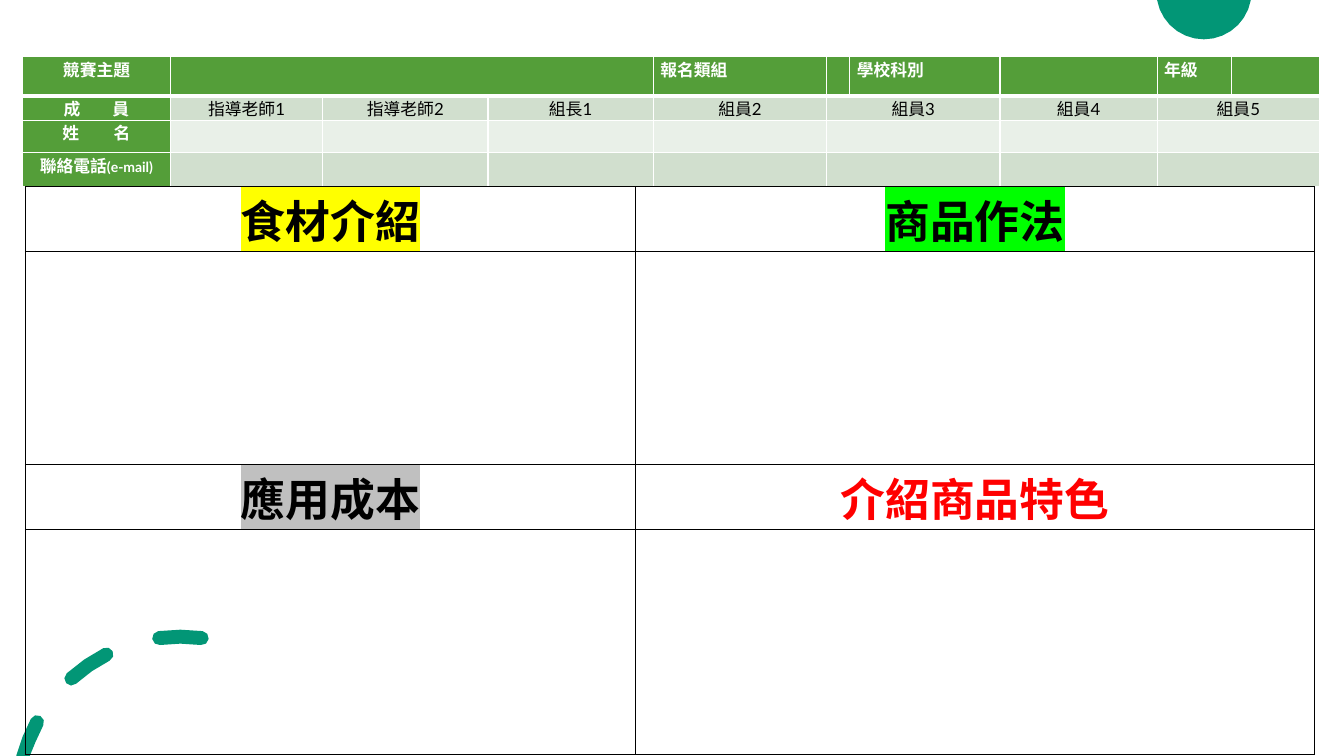
"""Build the contest entry form slide with its two tables."""
from math import cos, radians, sin
from lxml.etree import SubElement
from pptx import Presentation
from pptx.dml.color import RGBColor
from pptx.enum.text import PP_ALIGN
from pptx.oxml import parse_xml
from pptx.oxml.ns import nsdecls, qn
from pptx.util import Pt

TEAL = RGBColor(0x02, 0x96, 0x76)
GREEN = RGBColor(0x54, 0x9E, 0x39)
SAGE = RGBColor(0xD1, 0xDF, 0xCE)
PALE = RGBColor(0xE9, 0xF0, 0xE8)
WHITE = RGBColor(0xFF, 0xFF, 0xFF)
BLACK = RGBColor(0x00, 0x00, 0x00)
RED = RGBColor(0xFF, 0x00, 0x00)
YELLOW = RGBColor(0xFF, 0xFF, 0x00)
LIME = RGBColor(0x00, 0xFF, 0x00)
GREY = RGBColor(0xC0, 0xC0, 0xC0)
WIDE, HIGH, FINE = 960, 540, 100


def write(cell, text, size=12, font="Lato", color=WHITE, bold=True,
          align=PP_ALIGN.CENTER, mark=None, gap=0):
    para = cell.text_frame.paragraphs[0]
    para.alignment = align
    run = para.add_run()
    run.text = text
    run.font.size, run.font.bold = Pt(size), bold
    run.font.color.rgb = color
    props = run.font._element
    if gap:
        props.set("spc", str(gap * 100))
    if mark:
        light = SubElement(props, qn("a:highlight"))
        SubElement(light, qn("a:srgbClr")).set("val", str(mark))
    run.font.name = font


def arc(mid, top, size, start, end, steps):
    turns = [radians(start + (end - start) * i / steps) for i in range(steps + 1)]
    return [(round(FINE * (mid + size * cos(a))),
             round(FINE * min(max(top - size * sin(a), 0), HIGH))) for a in turns]


deck = Presentation()
deck.slide_width, deck.slide_height = Pt(WIDE), Pt(HIGH)
slide = deck.slides.add_slide(deck.slide_layouts[6])

MID, LOW, RING, HALF = 128.9, 571.2, 116.4, 5
dashes = []
for start, end in [(82.5, 97.5), (117, 132), (151.6, 165)]:
    dash = arc(MID, LOW, RING + HALF, start, end, 2)
    for turn, tilt in [(end, end), (start, start + 180)]:
        x, y = MID + RING * cos(radians(turn)), LOW - RING * sin(radians(turn))
        dash += arc(x, y, HALF, tilt, tilt + 180, 4)[1:]
        if turn == end:
            dash += arc(MID, LOW, RING - HALF, end, start, 2)[1:]
    dashes.append(dash[:-1])

for group in [[arc(860, -5.9, 34, 190, 350, 14)], dashes]:
    pen = slide.shapes.build_freeform(*group[0][0], scale=Pt(1) / FINE)
    for i, points in enumerate(group):
        if i:
            pen.move_to(*points[0])
        pen.add_line_segments(points[1:], close=True)
    shape = pen.convert_to_shape()
    shape.shadow.inherit = False
    shape.fill.solid()
    shape.fill.fore_color.rgb = TEAL
    shape.line.fill.background()

grids = []
for left, top, cols, rows, edge in [
    (16, 40.5, [105.8, 108.7, 118.1, 118.1, 123.8, 16.6, 107.3, 112.3, 53.3, 62.6],
     [28, 17.5, 23.2, 24], WHITE),
    (18.2, 133.3, [435.6, 485.3], [46, 152, 46, 161], BLACK),
]:
    grid = slide.shapes.add_table(len(rows), len(cols), Pt(left), Pt(top),
                                  Pt(sum(cols)), Pt(sum(rows))).table
    grid.first_row = grid.horz_banding = False
    for col, width in zip(grid.columns, cols):
        col.width = Pt(width)
    for row, height in zip(grid.rows, rows):
        row.height = Pt(height)
    for r in range(len(rows)):
        for c in range(len(cols)):
            cell = grid.cell(r, c)
            cell.margin_left = cell.margin_right = Pt(5)
            cell.margin_top = cell.margin_bottom = Pt(0)
            if edge == WHITE:
                cell.fill.solid()
                cell.fill.fore_color.rgb = (
                    GREEN if r == 0 or c == 0 else PALE if r == 2 else SAGE)
            else:
                cell.fill.background()
            props = cell._tc.get_or_add_tcPr()
            for i, side in enumerate("LRTB"):
                thick = edge == WHITE and (r, side) in [(0, "B"), (1, "T")]
                props.insert(i, parse_xml(
                    f'<a:ln{side} {nsdecls("a")} w="{Pt(3 if thick else 1)}">'
                    f'<a:solidFill><a:srgbClr val="{edge}"/></a:solidFill></a:ln{side}>'))
    grids.append(grid)
form, board = grids

form.cell(0, 1).merge(form.cell(0, 3))
for r in range(1, 4):
    for c in (5, 8):
        form.cell(r, c).merge(form.cell(r, c + 1))

for c, text in [(0, "競賽主題"), (4, "報名類組"), (6, "學校科別"), (8, "年級")]:
    write(form.cell(0, c), text, align=PP_ALIGN.LEFT)
form.cell(0, 0).text_frame.paragraphs[0]._p.get_or_add_pPr().set("indent", str(Pt(24)))

for r, first, last, gap in [(1, "成 ", "員", 10), (2, "姓 ", "名", 11)]:
    write(form.cell(r, 0), first, gap=gap)
    write(form.cell(r, 0), last)
write(form.cell(3, 0), "聯絡電話")
write(form.cell(3, 0), "(e-mail)", size=10)

for c, text in [(1, "指導老師1"), (2, "指導老師2"), (3, "組長1"), (4, "組員2"),
                (5, "組員3"), (7, "組員4"), (8, "組員5")]:
    write(form.cell(1, c), text, color=BLACK, bold=False)

for r, c, text, color, mark in [
    (0, 0, "食材介紹", BLACK, YELLOW), (0, 1, "商品作法", BLACK, LIME),
    (2, 0, "應用成本", BLACK, GREY), (2, 1, "介紹商品特色", RED, None),
]:
    write(board.cell(r, c), text, size=32, font="Calibri", color=color, mark=mark)

deck.save("out.pptx")
